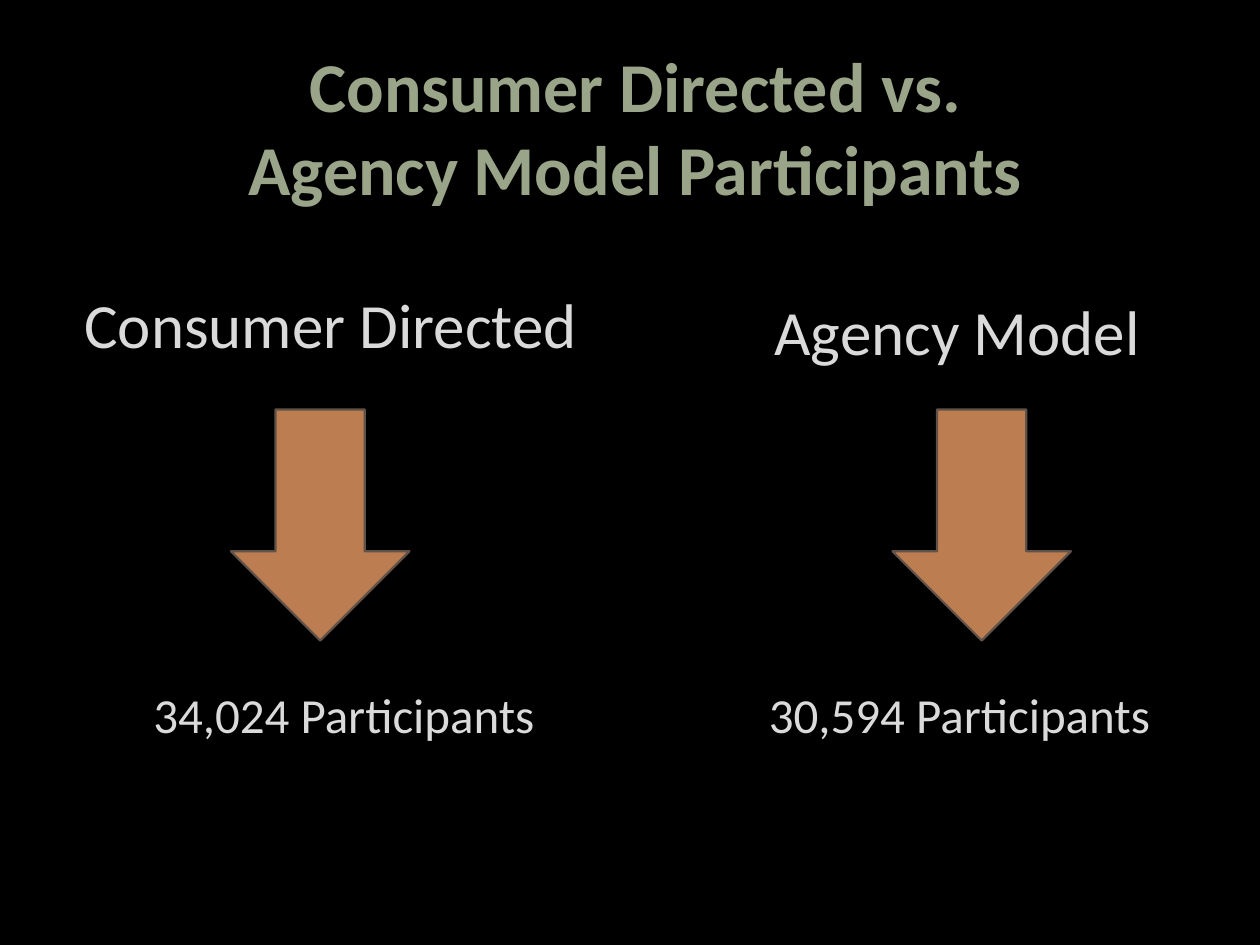
from lxml import etree
from pptx import Presentation
from pptx.dml.color import RGBColor
from pptx.enum import shapes, text
from pptx.oxml import ns
from pptx.util import Pt


def color(value):
    """Return the colour of a hex string."""
    return RGBColor.from_string(value)


def outline(r):
    """Give a run a faint grey text outline."""
    ln = etree.Element(ns.qn("a:ln"), w=str(Pt(0.75)))
    fill = etree.SubElement(ln, ns.qn("a:solidFill"))
    clr = etree.SubElement(fill, ns.qn("a:srgbClr"), val="404040")
    etree.SubElement(clr, ns.qn("a:alpha"), val="10000")
    r.font._element.insert(0, ln)


def fill_text(sp, box, lines, size, hex_color, anchor, bold=False, top=3.6):
    """Place a placeholder in its box and write centred lines into it."""
    sp.left, sp.top, sp.width, sp.height = (Pt(v) for v in box)
    tf = sp.text_frame
    tf.word_wrap = True
    tf.auto_size = text.MSO_AUTO_SIZE.NONE
    tf.vertical_anchor = anchor
    tf.margin_top = Pt(top)
    p = tf.paragraphs[0]
    p.alignment = text.PP_ALIGN.CENTER
    p.space_before = Pt(0)
    for i, line in enumerate(lines):
        if i:
            p.add_line_break()
        r = p.add_run()
        r.text = line
        r.font.name = "Calibri"
        r.font.size = Pt(size)
        r.font.bold = bold
        r.font.color.rgb = color(hex_color)
        outline(r)
    return p


def add_heading(sp, box, label):
    """Write the heading of one column."""
    fill_text(sp, box, [label], 36, "DADADA", text.MSO_ANCHOR.BOTTOM)


def add_count(sp, box, label, text_top):
    """Write a participant count without a bullet, starting at text_top."""
    p = fill_text(sp, box, [label], 28, "DADADA", text.MSO_ANCHOR.TOP,
                  top=text_top - box[1])
    pPr = p._p.get_or_add_pPr()
    pPr.set("marL", str(Pt(3)))
    pPr.set("indent", "0")
    etree.SubElement(pPr, ns.qn("a:buNone"))


def add_arrow(s, box):
    """Draw a down arrow in the given box."""
    sp = s.shapes.add_shape(shapes.MSO_SHAPE.DOWN_ARROW, *(Pt(v) for v in box))
    sp.shadow.inherit = False
    sp.fill.solid()
    sp.fill.fore_color.rgb = color("BC7D50")
    sp.line.color.rgb = color("605248")
    sp.line.width = Pt(1.25)


def main():
    """Build the comparison slide."""
    prs = Presentation()
    prs.slide_width, prs.slide_height = Pt(720), Pt(540)
    s = prs.slides.add_slide(prs.slide_layouts[4])
    s.background.fill.solid()
    s.background.fill.fore_color.rgb = color("000000")
    ph = {sp.placeholder_format.idx: sp for sp in s.placeholders}

    fill_text(s.shapes.title, (62, 28, 611, 88),
              ["Consumer Directed vs. ", "Agency Model Participants "],
              40, "9AA489", text.MSO_ANCHOR.MIDDLE, bold=True)
    columns = [
        ("Consumer Directed", (36, 151, 306, 59),
         "34,024 Participants", (36, 214, 318, 290), 132),
        ("Agency Model", (394, 151, 306, 63),
         "30,594 Participants", (407.5, 192, 278.5, 290), 510),
    ]
    for i, (label, head_box, count, count_box, arrow_left) in enumerate(columns):
        add_heading(ph[1 + 2 * i], head_box, label)
        add_count(ph[2 + 2 * i], count_box, count, 391)
        add_arrow(s, (arrow_left, 234, 102, 132))
    prs.save("out.pptx")


if __name__ == "__main__":
    main()
